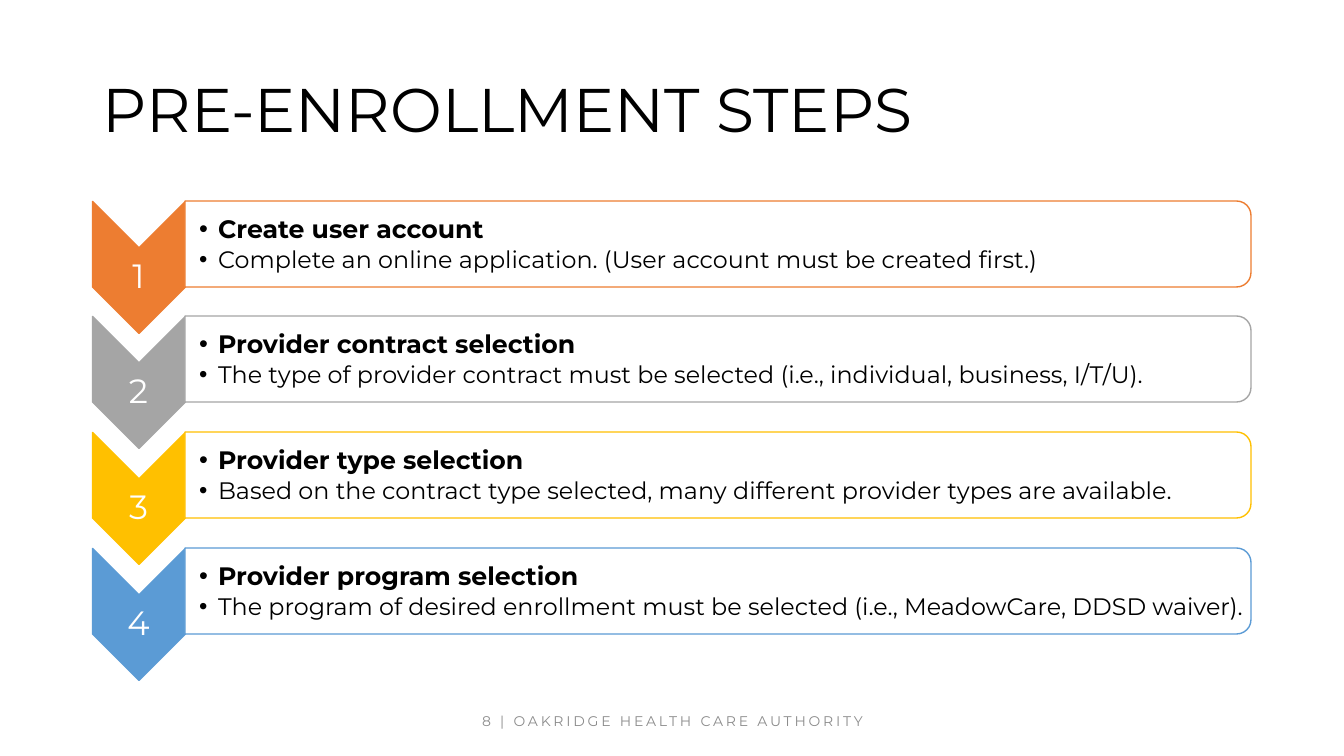
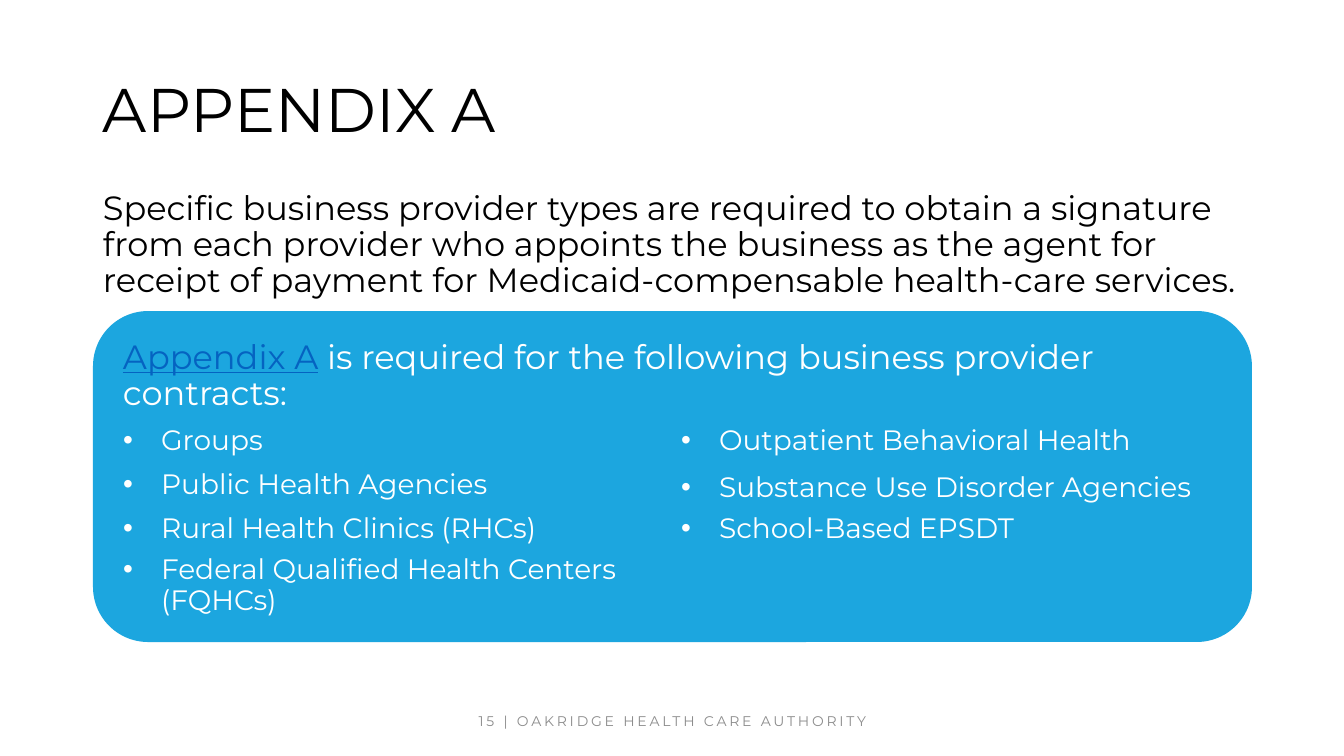
from lxml import etree
from pptx import Presentation
from pptx.dml.color import RGBColor
from pptx.enum.shapes import MSO_SHAPE
from pptx.enum.text import MSO_ANCHOR, PP_ALIGN
from pptx.oxml.ns import qn
from pptx.util import Emu, Pt

PX = 914400 / 100.8
FONT = "Montserrat"
COLORS = {
    "ink": "000000", "white": "FFFFFF", "footer": "8C8C8C", "link": "0563C1",
    "panel": "1CA6DF", "orange": "ED7D31", "gray": "A5A5A5",
    "yellow": "FFC000", "blue": "5B9BD5",
}
LEFT, TOP, MIDDLE = PP_ALIGN.LEFT, MSO_ANCHOR.TOP, MSO_ANCHOR.MIDDLE
CENTER = PP_ALIGN.CENTER
CHEVRON, ROUND_END = MSO_SHAPE.CHEVRON, MSO_SHAPE.ROUND_2_SAME_RECTANGLE
ROUNDED = MSO_SHAPE.ROUNDED_RECTANGLE
NO_STYLE = "{2D5ABB26-0587-4C30-8999-92F81FD0307C}"
MARGIN, CONTENT_WIDTH = 93, 1159

STEPS = [
    ("orange", "Create user account",
     "Complete an online application. (User account must be created first.)"),
    ("gray", "Provider contract selection",
     "The type of provider contract must be selected (i.e., individual, business, I/T/U)."),
    ("yellow", "Provider type selection",
     "Based on the contract type selected, many different provider types are available."),
    ("blue", "Provider program selection",
     "The program of desired enrollment must be selected (i.e., MeadowCare, DDSD waiver)."),
]
# Each cell holds its text and line spacing.
CONTRACTS = [
    (47, [("Groups", 1), ("Outpatient Behavioral Health", 1)]),
    (44, [("Public Health Agencies", 0.9), ("Substance Use Disorder Agencies", 1)]),
    (41, [("Rural Health Clinics (RHCs)", 0.9), ("School-Based EPSDT", 0.9)]),
    (71, [("Federal Qualified Health Centers (FQHCs)", 0.9)]),
]


def px(*lengths):
    return [Emu(round(length * PX)) for length in lengths]


def write(para, text, size, color="ink", bold=False, underline=False, align=LEFT,
          spacing=0.9, before=0, tracking=0, bullet_indent=0):
    """Append a formatted span to a paragraph and set the paragraph format."""
    para.alignment = align
    para.line_spacing = spacing
    para.space_before = Pt(before)
    if bullet_indent:
        indent = px(bullet_indent)[0]
        properties = para._p.get_or_add_pPr()
        properties.set("marL", str(indent))
        properties.set("indent", str(-indent))
        etree.SubElement(properties, qn("a:buFont")).set("typeface", "Arial")
        etree.SubElement(properties, qn("a:buChar")).set("char", "•")
    span = para.add_run()
    span.text = text
    span.font.name = FONT
    span.font.size = Pt(size)
    span.font.bold = bold
    span.font.underline = underline
    span.font.color.rgb = RGBColor.from_string(COLORS[color])
    if tracking:
        span._r.get_or_add_rPr().set("spc", str(tracking * 100))


deck = Presentation()
deck.slide_width, deck.slide_height = px(1344, 756)


def add_text_box(page, bounds, anchor=TOP, insets=(10, 5, 10, 5)):
    frame = page.shapes.add_textbox(*px(*bounds)).text_frame
    frame.word_wrap = True
    frame.vertical_anchor = anchor
    (frame.margin_left, frame.margin_top,
     frame.margin_right, frame.margin_bottom) = px(*insets)
    return frame


# Shared title and footer
pages = []
for number, title in [(8, "PRE-ENROLLMENT STEPS"), (15, "APPENDIX A")]:
    page = deck.slides.add_slide(deck.slide_layouts[6])
    pages.append(page)
    frame = add_text_box(page, (MARGIN, 40, CONTENT_WIDTH, 146), MIDDLE)
    write(frame.paragraphs[0], title, 44)
    frame = add_text_box(page, (MARGIN, 701, CONTENT_WIDTH, 40), MIDDLE)
    write(frame.paragraphs[0], f"{number} | OAKRIDGE HEALTH CARE AUTHORITY", 10,
          "footer", align=CENTER, spacing=1, tracking=2)
steps_page, appendix_page = pages

# Enrollment steps: both shapes are turned a quarter, so bounds are before turning
for index, (color, heading, detail) in enumerate(STEPS):
    top = 201 + index * 347 // 3
    for kind, fill, bounds in [
        (CHEVRON, color, (73, top + 20, 132, 93)),
        (ROUND_END, "white", (675, top - 490, 86, 1066)),
    ]:
        shape = steps_page.shapes.add_shape(kind, *px(*bounds))
        shape.rotation = 90
        shape.shadow.inherit = False
        shape.fill.solid()
        shape.fill.fore_color.rgb = RGBColor.from_string(COLORS[fill])
        shape.line.color.rgb = RGBColor.from_string(COLORS[color])
        shape.line.width = Pt(1)
    frame = add_text_box(steps_page, (92, top + 54, 93, 40), MIDDLE, (1, 1, 1, 1))
    write(frame.paragraphs[0], str(index + 1), 24, "white", align=CENTER, spacing=1)
    frame = add_text_box(steps_page, (185, top + 5, 1062, 78), MIDDLE, (14, 1, 1, 1))
    write(frame.paragraphs[0], heading, 18, bold=True, bullet_indent=19)
    write(frame.add_paragraph(), detail, 17, before=3, bullet_indent=19)

# Appendix introduction and panel
panel = appendix_page.shapes.add_shape(ROUNDED, *px(MARGIN, 311, CONTENT_WIDTH, 331))
panel.shadow.inherit = False
panel.fill.solid()
panel.fill.fore_color.rgb = RGBColor.from_string(COLORS["panel"])
panel.line.fill.background()
frame = add_text_box(appendix_page, (MARGIN, 186, CONTENT_WIDTH, 120))
write(frame.paragraphs[0],
      "Specific business provider types are required to obtain a signature from each "
      "provider who appoints the business as the agent for receipt of payment for "
      "Medicaid-compensable health-care services.", 24)
frame = add_text_box(appendix_page, (113, 335, 1117, 84))
write(frame.paragraphs[0], "Appendix A", 24, "link", underline=True)
write(frame.paragraphs[0], " is required for the following business provider contracts:",
      24, "white")

# Contract table
table_height = sum(height for height, cells in CONTRACTS)
table = appendix_page.shapes.add_table(
    len(CONTRACTS), 2, *px(113, 418, 1116, table_height)).table
table.first_row = False
table.horz_banding = False
table._tbl.tblPr.find(qn("a:tableStyleId")).text = NO_STYLE
for row_index, (height, contracts) in enumerate(CONTRACTS):
    table.rows[row_index].height = px(height)[0]
    for cell in table.rows[row_index].cells:
        cell.fill.background()
    for column_index, (contract, spacing) in enumerate(contracts):
        para = table.cell(row_index, column_index).text_frame.paragraphs[0]
        write(para, contract, 20, "white", spacing=spacing, bullet_indent=38)

deck.save("out.pptx")
